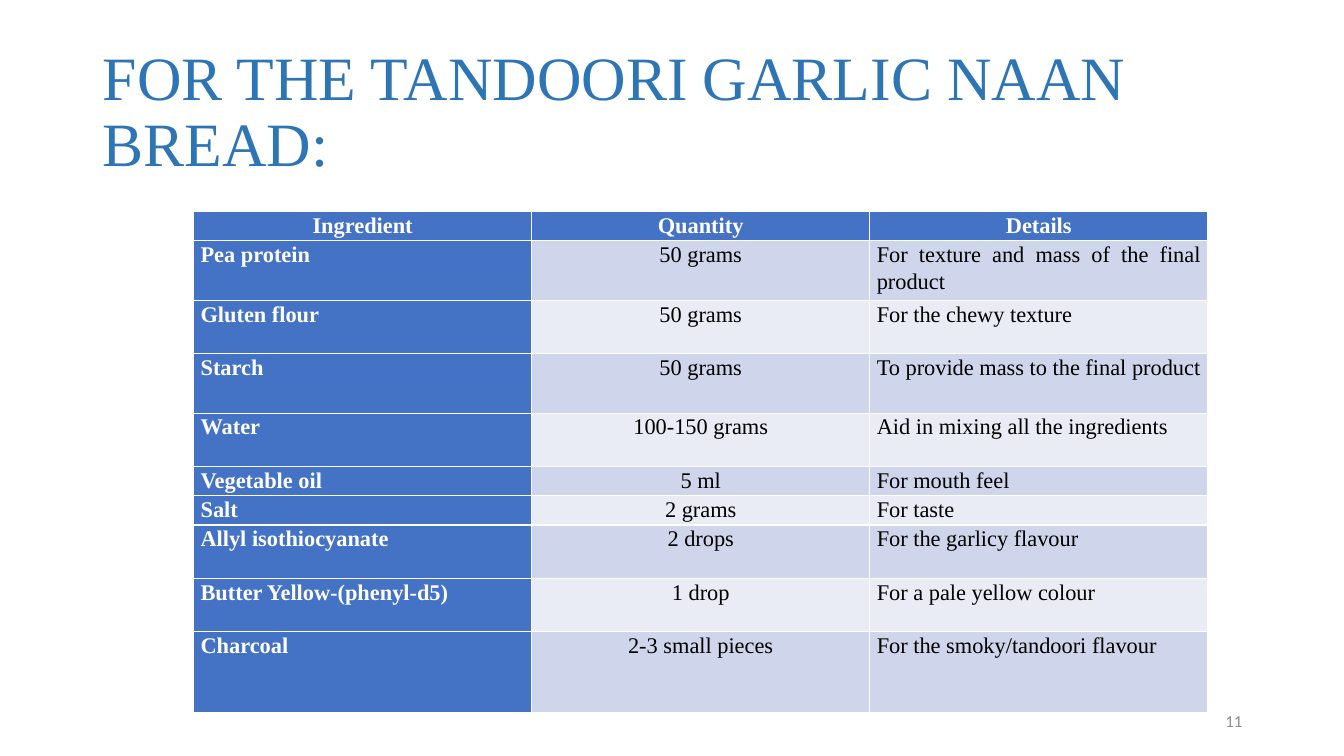
from dataclasses import dataclass

from pptx import Presentation
from pptx.dml.color import RGBColor
from pptx.enum.text import MSO_ANCHOR, MSO_AUTO_SIZE, PP_ALIGN
from pptx.util import Inches, Pt

LEFT, MID, RIGHT, JUST = PP_ALIGN.LEFT, PP_ALIGN.CENTER, PP_ALIGN.RIGHT, PP_ALIGN.JUSTIFY
CENTRE = MSO_ANCHOR.MIDDLE
FIXED = MSO_AUTO_SIZE.NONE


@dataclass(frozen=True)
class Theme:
    """Colours, fonts and type sizes of the slide."""
    serif: str = "Times New Roman"
    sans: str = "Calibri"
    title: str = "2E75B6"
    head: str = "4472C4"
    bands: tuple = ("CFD5EA", "E9EBF5")
    light: str = "FFFFFF"
    dark: str = "000000"
    grey: str = "8C8C8C"
    big: int = 44
    body: int = 16
    small: int = 12


THEME = Theme()

ROWS = [
    (0.29, "Ingredient", "Quantity", "Details"),
    (0.59, "Pea protein", "50 grams", "For texture and mass of the final product"),
    (0.53, "Gluten flour", "50 grams", "For the chewy texture"),
    (0.59, "Starch", "50 grams", "To provide mass to the final product"),
    (0.53, "Water", "100-150 grams", "Aid in mixing all the ingredients"),
    (0.29, "Vegetable oil", "5 ml", "For mouth feel"),
    (0.29, "Salt", "2 grams", "For taste"),
    (0.53, "Allyl isothiocyanate", "2 drops", "For the garlicy flavour"),
    (0.53, "Butter Yellow-(phenyl-d5)", "1 drop", "For a pale yellow colour"),
    (0.8, "Charcoal", "2-3 small pieces", "For the smoky/tandoori flavour"),
]


def style(para, face, size, tint, align, bold=False):
    """Set the font and alignment of a paragraph."""
    para.alignment = align
    font = para.font
    font.name, font.size, font.bold = face, Pt(size), bold
    font.color.rgb = RGBColor.from_string(tint)


def add_title(slide, box, text):
    """Place and format the title placeholder in the box."""
    title = slide.shapes.title
    title.left, title.top, title.width, title.height = map(Inches, box)
    frame = title.text_frame
    frame.text = text
    frame.word_wrap, frame.auto_size = True, FIXED
    frame.vertical_anchor = CENTRE
    para = frame.paragraphs[0]
    para.line_spacing = 0.9
    style(para, THEME.serif, THEME.big, THEME.title, LEFT)


def fill_cell(cell, text, row, col):
    """Write one cell, styled by its row and column."""
    key = row == 0 or col == 0
    cell.margin_left = cell.margin_right = Inches(0.07)
    cell.margin_top = cell.margin_bottom = 0
    cell.fill.solid()
    tint = THEME.head if key else THEME.bands[(row - 1) % 2]
    cell.fill.fore_color.rgb = RGBColor.from_string(tint)
    cell.text = text
    para = cell.text_frame.paragraphs[0]
    para.line_spacing, para.space_after = 1.07, Pt(8)
    align = MID if row == 0 or col == 1 else JUST
    style(para, THEME.serif, THEME.body, THEME.light if key else THEME.dark, align, key)


def add_grid(slide, box, rows):
    """Place the ingredient table in the box with equal columns."""
    count = len(rows[0]) - 1
    table = slide.shapes.add_table(len(rows), count, *map(Inches, box)).table
    table.first_col = True
    for col in table.columns:
        col.width = Inches(box[2] / count)
    for row, (height, *texts) in enumerate(rows):
        table.rows[row].height = Inches(height)
        for col, text in enumerate(texts):
            fill_cell(table.cell(row, col), text, row, col)


def add_number(slide, box, text):
    """Place the page number in the box."""
    frame = slide.shapes.add_textbox(*map(Inches, box)).text_frame
    frame.word_wrap = True
    frame.vertical_anchor = CENTRE
    frame.text = text
    style(frame.paragraphs[0], THEME.sans, THEME.small, THEME.grey, RIGHT)


def main():
    """Build the slide and save it."""
    deck = Presentation()
    deck.slide_width, deck.slide_height = Inches(13.33), Inches(7.5)
    slide = deck.slides.add_slide(deck.slide_layouts[5])
    add_title(slide, (0.92, 0.4, 11.75, 1.45), "FOR THE TANDOORI GARLIC NAAN BREAD:")
    add_grid(slide, (1.92, 2.1, 10.06, 4.95), ROWS)
    add_number(slide, (9.42, 6.95, 3, 0.4), "11")
    deck.save("out.pptx")


if __name__ == "__main__":
    main()
